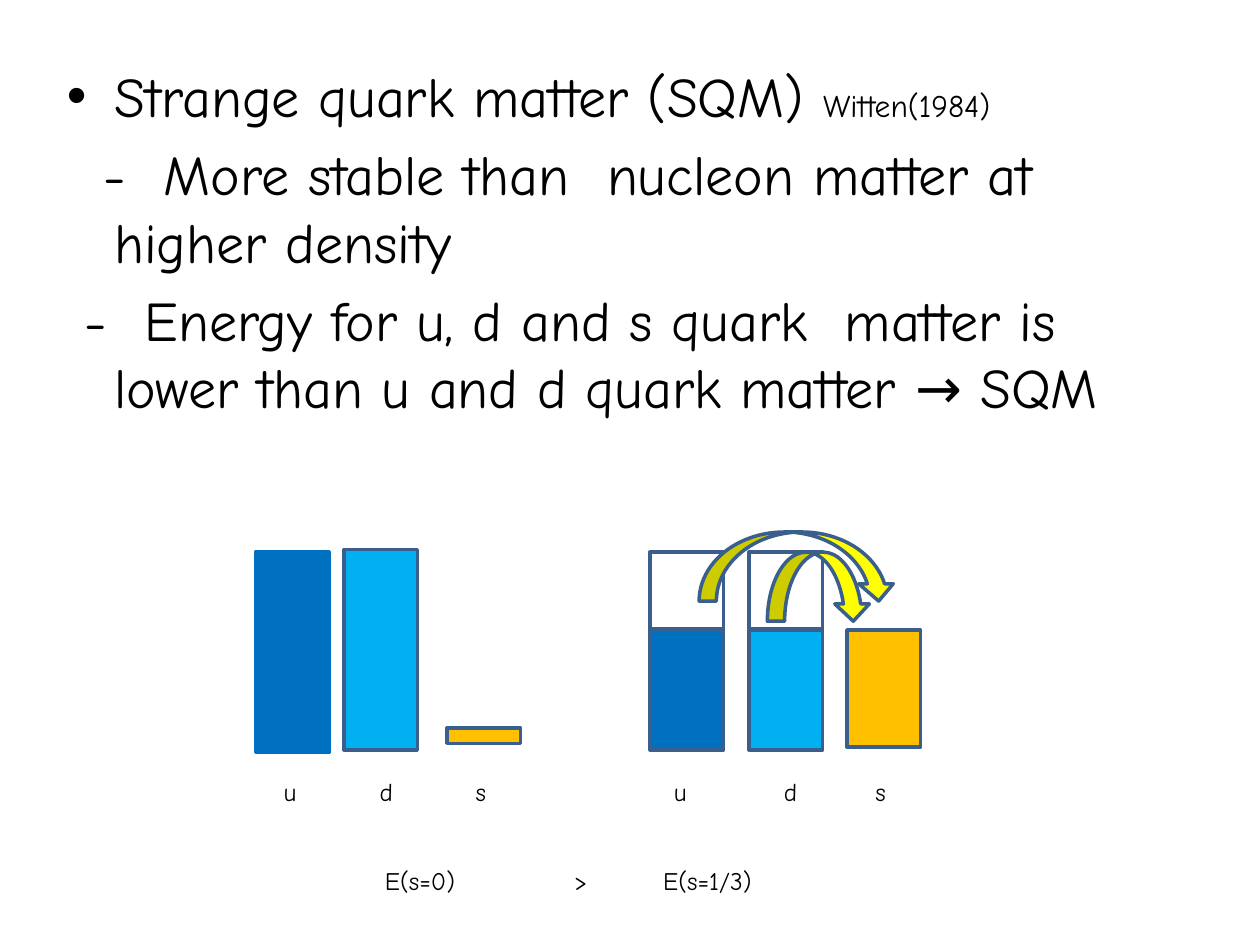
import pptx
import pptx.dml.color
import pptx.enum.shapes
import pptx.enum.text
import pptx.oxml
import pptx.oxml.ns
import pptx.util
from lxml import etree

Pt = pptx.util.Pt
SHAPE = pptx.enum.shapes.MSO_SHAPE
ALIGN = pptx.enum.text.PP_ALIGN

BLUE, CYAN, GOLD, YELLOW, EDGE = "0070C0", "00B0F0", "FFC000", "FFFF00", "3A5F8C"
BAR_WIDTH = 42
FULL_TOP, SHARED_TOP = 315.5, 360


def rgb(value):
    return pptx.dml.color.RGBColor.from_string(value)


def add_child(parent, tag, **attributes):
    return etree.SubElement(parent, pptx.oxml.ns.qn(tag), attributes)


class QuarkSlide:
    font = "Comic Neue"
    ink = "000000"

    def __init__(self, deck):
        self.slide = deck.slides.add_slide(deck.slide_layouts[1])
        heading = self.slide.shapes.title
        heading.element.getparent().remove(heading.element)
        self.diagram = self.slide.shapes.add_group_shape().shapes

    def run(self, paragraph, text, size):
        run = paragraph.add_run()
        run.text = text
        run.font.name = self.font
        run.font.size = Pt(size)
        run.font.color.rgb = rgb(self.ink)

    def body(self, items):
        """Fill the body from (first-line indent, bulleted, runs) items."""
        body = self.slide.placeholders[1]
        body.left, body.top, body.width, body.height = Pt(31), Pt(31.5), Pt(648), Pt(380)
        for number, (indent, bulleted, runs) in enumerate(items):
            frame = body.text_frame
            paragraph = frame.add_paragraph() if number else frame.paragraphs[0]
            properties = paragraph._p.get_or_add_pPr()
            properties.set("marL", str(Pt(27)))
            properties.set("indent", str(Pt(indent)))
            if not bulleted:
                add_child(properties, "a:buNone")
            for text, size in runs:
                self.run(paragraph, text, size)

    def shape(self, kind, left, top, width, height, fill=None, line=EDGE):
        shape = self.diagram.add_shape(kind, Pt(left), Pt(top), Pt(width), Pt(height))
        shape.shadow.inherit = False
        if fill:
            shape.fill.solid()
            shape.fill.fore_color.rgb = rgb(fill)
        else:
            shape.fill.background()
        shape.line.color.rgb = rgb(line)
        shape.line.width = Pt(2)

    def bar(self, left, top, height, fill=None, line=EDGE):
        self.shape(SHAPE.RECTANGLE, left, top, BAR_WIDTH, height, fill, line)

    def transfer_arrow(self, left, top, width):
        self.shape(SHAPE.CURVED_DOWN_ARROW, left, top, width, 39.5, YELLOW)

    def label(self, text, left, top, width, align=ALIGN.CENTER, tabs=()):
        box = self.diagram.add_textbox(Pt(left), Pt(top), Pt(width), Pt(28))
        frame = box.text_frame
        frame.word_wrap = True
        frame.vertical_anchor = pptx.enum.text.MSO_ANCHOR.BOTTOM
        frame.margin_left = frame.margin_right = frame.margin_top = frame.margin_bottom = 0
        paragraph = frame.paragraphs[0]
        paragraph.alignment = align
        if tabs:
            stops = add_child(paragraph._p.get_or_add_pPr(), "a:tabLst")
            for position in tabs:
                add_child(stops, "a:tab", pos=str(Pt(position)), algn="l")
        self.run(paragraph, text, 14.4)


def main():
    deck = pptx.Presentation()
    deck.slide_width, deck.slide_height = Pt(720), Pt(540)
    page = QuarkSlide(deck)

    page.body([
        (-27, True, [("Strange quark matter (SQM) ", 32), ("Witten(1984)", 18)]),
        (-6, False, [("-  More stable than  nucleon matter at higher density", 32)]),
        (-17, False, [("-  Energy for u, d and s quark  matter is lower than "
                       "u and d quark matter → SQM", 32)]),
    ])

    # Without strangeness: u and d full, s nearly empty
    page.bar(146, FULL_TOP, 114.5, BLUE, BLUE)
    page.bar(196.5, 314, 114.5, CYAN)
    page.bar(255.5, 416, 8.75, GOLD)

    # With strangeness: the upper part of u and d moves to s
    for left, fill in ((371.5, BLUE), (428, CYAN)):
        page.bar(left, SHARED_TOP, 68.5, fill)
        page.bar(left, FULL_TOP, 44)
    page.bar(484, SHARED_TOP, 67, GOLD)
    page.transfer_arrow(399.5, 304, 112.5)
    page.transfer_arrow(438.5, FULL_TOP, 59)

    for flavours in (zip("uds", (147, 202, 256)), zip("uds", (370, 433, 484.5))):
        for flavour, left in flavours:
            page.label(flavour, left, 433, 37.5)
    page.label("E(s=0)\t>\tE(s=1/3)", 220, 484, 258, ALIGN.LEFT, tabs=(108, 159))

    deck.save("out.pptx")


if __name__ == "__main__":
    main()
